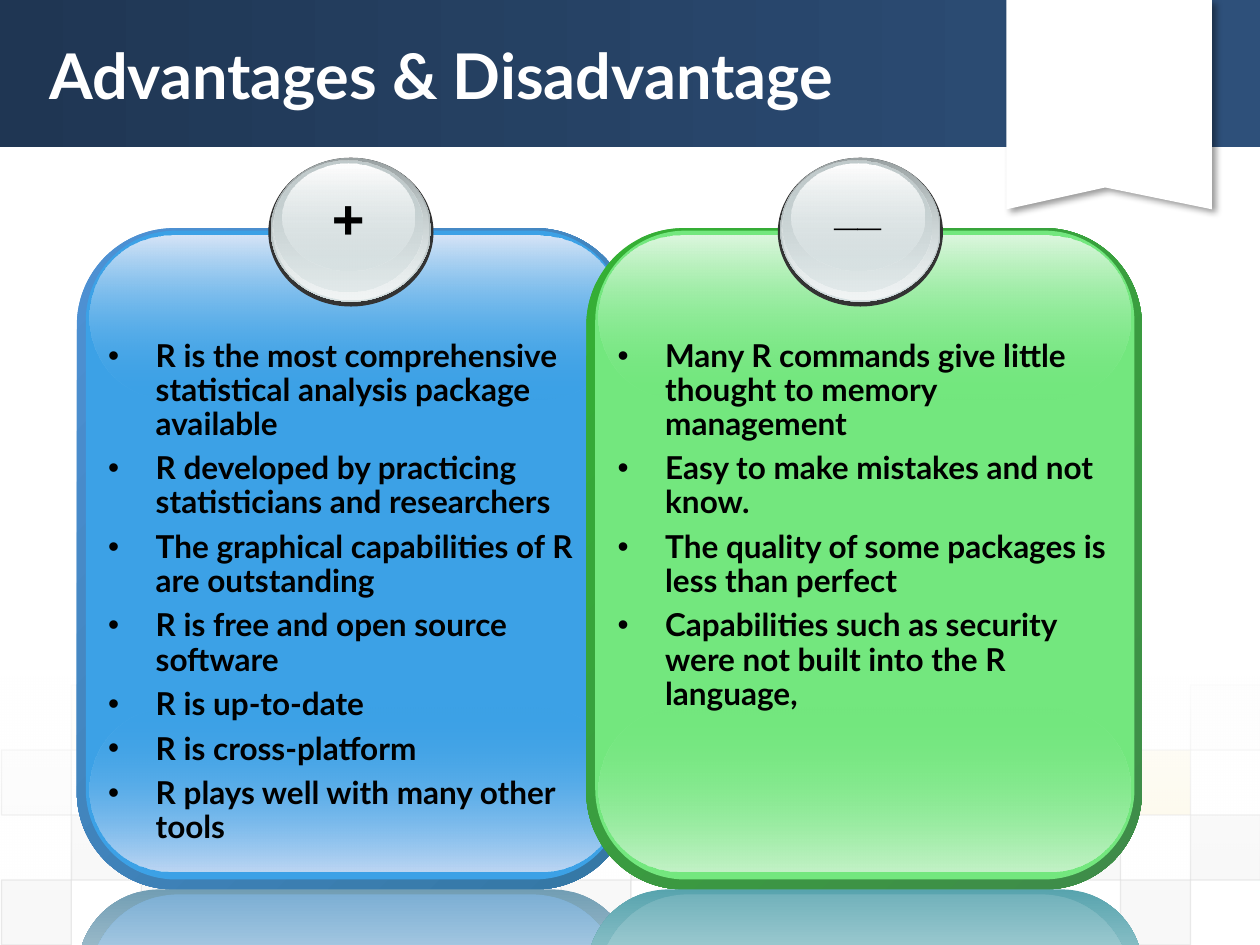
from lxml.etree import SubElement
from pptx import Presentation
from pptx.dml.color import RGBColor
from pptx.enum.shapes import MSO_SHAPE as Shape
from pptx.enum.text import MSO_ANCHOR as Anchor, MSO_AUTO_SIZE as AutoSize, PP_ALIGN as Align
from pptx.oxml.ns import qn
from pptx.util import Cm, Pt

WHITE = RGBColor(0xFF, 0xFF, 0xFF)
BLACK = RGBColor(0x00, 0x00, 0x00)
NAVY = RGBColor(0x1F, 0x36, 0x53)
STEEL = RGBColor(0x2E, 0x50, 0x7A)
GREY = RGBColor(0xDD, 0xDD, 0xDD)
PALE_GREY = RGBColor(0xEA, 0xEA, 0xEA)
LEAF = RGBColor(0x8A, 0xC2, 0x46)
YELLOW = RGBColor(0xEF, 0xC8, 0x21)
CHARCOAL = RGBColor(0x33, 0x33, 0x33)
METAL = RGBColor(0x99, 0xA1, 0xA2)
SILVER = RGBColor(0xC1, 0xCB, 0xCC)
MIST = RGBColor(0xD6, 0xE1, 0xE2)
FROST = RGBColor(0xF2, 0xF5, 0xF5)

BLUE = {
    "rim": (RGBColor(0x4E, 0x91, 0xD4), RGBColor(0x34, 0x77, 0xA4)),
    "face": RGBColor(0x3C, 0xA1, 0xE6),
    "top": RGBColor(0xD7, 0xE5, 0xF7),
    "bottom": RGBColor(0xBD, 0xD6, 0xF3),
    "mirror_rim": RGBColor(0x72, 0x9E, 0xB4),
    "mirror_face": RGBColor(0x7D, 0xAF, 0xD4),
}
GREEN = {
    "rim": (RGBColor(0x34, 0xB0, 0x34), RGBColor(0x3F, 0x8B, 0x4A)),
    "face": RGBColor(0x73, 0xE7, 0x7E),
    "top": RGBColor(0xDD, 0xF7, 0xDF),
    "bottom": RGBColor(0xC3, 0xF2, 0xC7),
    "mirror_rim": RGBColor(0x58, 0xA4, 0xAE),
    "mirror_face": RGBColor(0x72, 0xB2, 0xBB),
}

ADVANTAGES = [
    "R is the most comprehensive statistical analysis package available",
    "R developed by practicing statisticians and researchers",
    "The graphical capabilities of R are outstanding",
    "R is free and open source software",
    "R is up-to-date",
    "R is cross-platform",
    "R plays well with many other tools",
]
DISADVANTAGES = [
    "Many R commands give little thought to memory management",
    "Easy to make mistakes and not know.",
    "The quality of some packages is less than perfect",
    "Capabilities such as security were not built into the R language,",
]

PANEL_STEP = 10.27
TILE_W, TILE_H = 1.41, 1.31
TILE_LEFT, TILE_TOP = 0.03, 13.81
TILE_ROWS = [
    (5, {1: YELLOW, 17: PALE_GREY}),
    (10, {0: GREY, 8: LEAF, 16: YELLOW}),
    (20, {**dict.fromkeys(range(1, 18, 2), GREY), 3: LEAF, 13: LEAF}),
    (20, {**dict.fromkeys(range(0, 17, 2), GREY), 6: YELLOW, 12: YELLOW}),
]


def set_attrs(obj, values):
    for name, value in values.items():
        setattr(obj, name, value)


def set_alpha(color_el, percent):
    if percent < 100:
        SubElement(color_el, qn("a:alpha"), val=str(percent * 1000))


def add_block(shapes, kind, box, fill, alpha=(100, 100), angle=90, adj=None):
    sp = shapes.add_shape(kind, *map(Cm, box))
    sp.shadow.inherit = False
    sp.line.fill.background()
    if adj is not None:
        sp.adjustments[0] = adj
    if isinstance(fill, RGBColor):
        sp.fill.solid()
        sp.fill.fore_color.rgb = fill
    else:
        sp.fill.gradient()
        sp.fill.gradient_angle = (360 - angle) % 360
        for stop, position, color in zip(sp.fill.gradient_stops, (0, 1), fill):
            stop.position = position
            stop.color.rgb = color
    for color_el, percent in zip(sp._element.spPr.iter(qn("a:srgbClr")), alpha):
        set_alpha(color_el, percent)
    return sp


def add_text(shapes, box, lines, font, frame=None, para=None, bullet=False):
    tf = shapes.add_textbox(*map(Cm, box)).text_frame
    set_attrs(tf, {"word_wrap": True, **(frame or {})})
    for i, line in enumerate(lines):
        p = tf.paragraphs[0] if i == 0 else tf.add_paragraph()
        set_attrs(p, para or {})
        if bullet:
            pPr = p._p.get_or_add_pPr()
            pPr.set("marL", str(Cm(0.96)))
            pPr.set("indent", str(Cm(-0.96)))
            SubElement(pPr, qn("a:buFont"), typeface="Arial")
            SubElement(pPr, qn("a:buChar"), char="•")
        r = p.add_run()
        r.text = line
        r.font.color.rgb = font["color"]
        set_attrs(r.font, {"name": font["name"], "size": Pt(font["size"]), "bold": True})


def add_ribbon(shapes):
    points = [(24.43, 0), (24.43, 4.22), (22.28, 3.78), (20.29, 4.22), (20.29, 0)]
    start, *rest = [(Cm(x), Cm(y)) for x, y in points]
    builder = shapes.build_freeform(*start)
    builder.add_line_segments(rest, close=True)
    sp = builder.convert_to_shape()
    sp.fill.solid()
    sp.fill.fore_color.rgb = WHITE
    sp.line.fill.background()
    sp.shadow.inherit = False
    effects = sp._element.spPr.find(qn("a:effectLst"))
    shadow = SubElement(effects, qn("a:outerShdw"), blurRad=str(Pt(4)),
                        dist=str(Pt(3)), dir=str(45 * 60000), algn="tl", rotWithShape="0")
    set_alpha(SubElement(shadow, qn("a:srgbClr"), val=str(BLACK)), 40)


def add_tiles(shapes):
    for row, (opacity, tiles) in enumerate(TILE_ROWS):
        for col, color in tiles.items():
            box = (TILE_LEFT + col * TILE_W, TILE_TOP + row * TILE_H, TILE_W, TILE_H)
            sp = add_block(shapes, Shape.RECTANGLE, box, color, (opacity,))
            sp.line.color.rgb = GREY
            sp.line.width = Pt(0.75)
            set_alpha(sp._element.spPr.find(qn("a:ln")).find(".//" + qn("a:srgbClr")), 60)


def add_panel(shapes, dx, theme, sign, sign_size, points):
    face = theme["face"]
    plates = [
        ((1.55, 4.6, 11.2, 13.33), theme["rim"], (100, 100), 45, 0.175),
        ((1.73, 4.65, 10.87, 13.08), face, (100,), 90, 0.167),
        ((1.8, 14.27, 10.72, 3.3), (face, theme["bottom"]), (0, 100), 90, 0.5),
        ((1.8, 4.75, 10.72, 3.3), (theme["top"], face), (100, 0), 90, 0.5),
        ((1.57, 17.93, 11.2, 4.06), (theme["mirror_rim"], WHITE), (100, 100), 90, 0.404),
        ((1.8, 18.03, 10.72, 3.61), (theme["mirror_face"], WHITE), (100, 100), 90, 0.5),
    ]
    discs = [
        ((5.41, 3.18, 3.33, 3.0), CHARCOAL, (100,)),
        ((5.46, 3.18, 3.23, 2.9), (METAL, MIST), (100, 100)),
        ((5.49, 3.2, 3.15, 2.84), (MIST, FROST), (0, 100)),
        ((5.51, 3.23, 3.0, 2.64), (SILVER, MIST), (100, 48)),
        ((5.69, 3.3, 2.67, 2.16), (WHITE, MIST), (100, 38)),
    ]

    def shift(box):
        return (box[0] + dx, *box[1:])

    group = shapes.add_group_shape().shapes
    for box, *style in plates:
        add_block(group, Shape.ROUNDED_RECTANGLE, shift(box), *style)
    for box, *style in discs:
        add_block(group, Shape.OVAL, shift(box), *style)
    add_text(group, shift((6.27, 3.58, 1.5, 1.5)), [sign],
             {"name": "Arial", "size": sign_size, "color": BLACK},
             {"word_wrap": False, "auto_size": AutoSize.SHAPE_TO_FIT_TEXT},
             {"alignment": Align.CENTER})
    add_text(group, shift((1.93, 6.73, 10.67, 9.45)), points,
             {"name": "Lato", "size": 18, "color": BLACK},
             {"auto_size": AutoSize.SHAPE_TO_FIT_TEXT},
             {"line_spacing": 0.9, "space_after": Pt(6)}, bullet=True)


def main():
    prs = Presentation()
    set_attrs(prs, {"slide_width": Cm(25.4), "slide_height": Cm(19.05)})
    shapes = prs.slides.add_slide(prs.slide_layouts[6]).shapes
    add_block(shapes, Shape.RECTANGLE, (0, 0, 25.4, 2.97), (NAVY, STEEL), angle=0)
    add_ribbon(shapes)
    add_tiles(shapes)
    add_block(shapes, Shape.RECTANGLE, (0, 13.64, 25.4, 4.11), (WHITE, WHITE), (90, 0))
    add_panel(shapes, 0, BLUE, "+", 32, ADVANTAGES)
    add_panel(shapes, PANEL_STEP, GREEN, "__", 24, DISADVANTAGES)
    add_text(shapes, (0.74, 0.33, 20.52, 2.34), ["Advantages & Disadvantage"],
             {"name": "Lato", "size": 36, "color": WHITE},
             {"vertical_anchor": Anchor.MIDDLE})
    prs.save("out.pptx")


if __name__ == "__main__":
    main()
